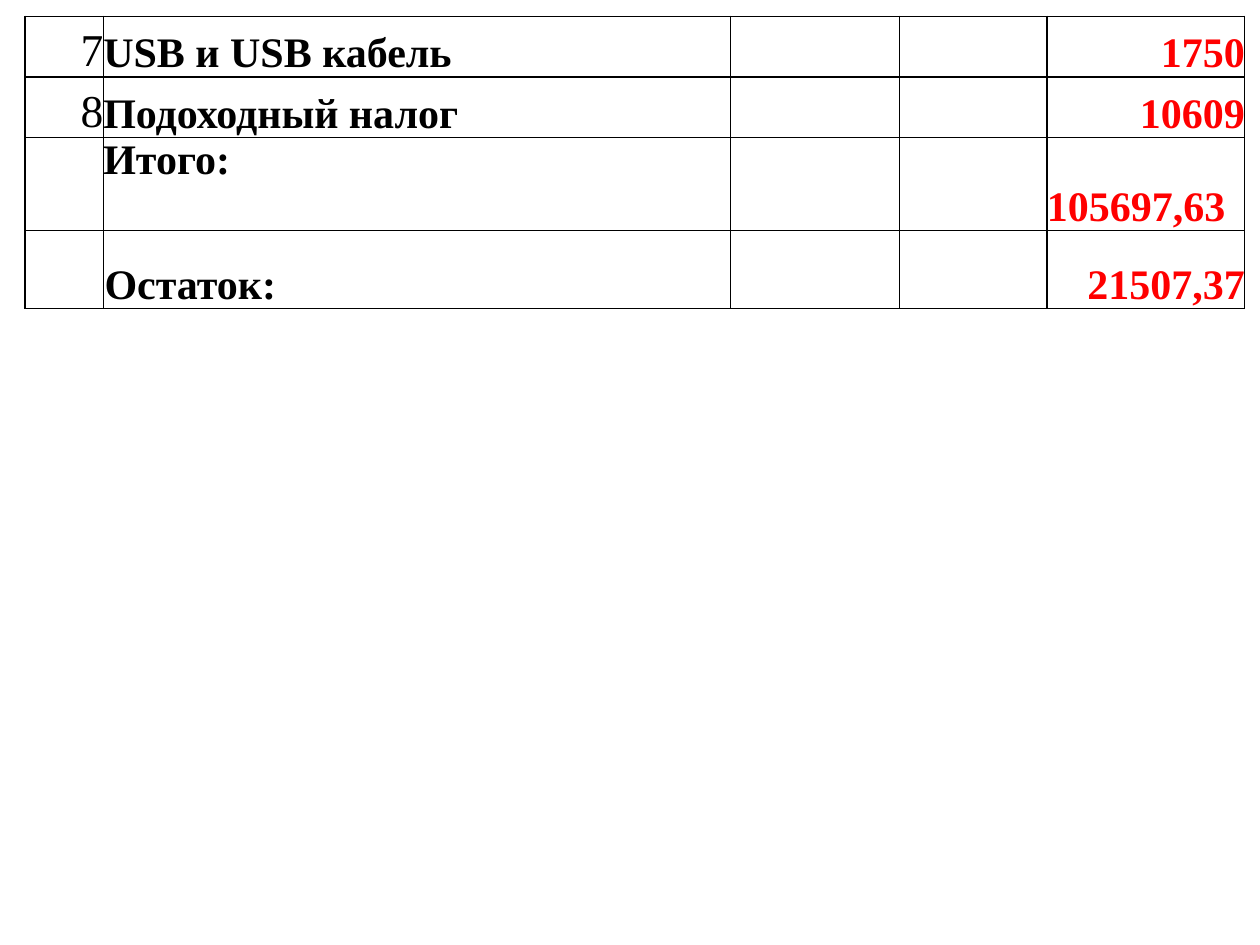
from dataclasses import dataclass
from lxml.etree import SubElement as Sub
from pptx import Presentation
from pptx.dml.color import RGBColor as RGB
from pptx.enum.text import MSO_ANCHOR as Anchor, PP_ALIGN as Align
from pptx.oxml.ns import qn
from pptx.util import Inches, Pt


@dataclass(frozen=True)
class Theme:
    font: str = "Times New Roman"
    ink: str = "000000"
    red: str = "FF0000"
    num: int = 26
    body: int = 24
    line: int = 1


theme = Theme()
rows = [
    ("7", "USB и USB кабель", "", "", "1750"),
    ("8", "Подоходный налог", "", "", "10609"),
    ("", "Итого: ", "", "", "105697,63"),
    ("", "Остаток:", "", "", "21507,37"),
]
widths = [0.62, 4.98, 1.34, 1.17, 1.57]
heights = [0.48, 0.48, 0.74, 0.62]
left, top = 0.2, 0.13
number, label, amount = 0, 1, 4
total, rest = 2, 3


def border(cell):
    props = cell._tc.get_or_add_tcPr()
    for side in ("lnL", "lnR", "lnT", "lnB"):
        line = Sub(props, qn("a:" + side), w=str(Pt(theme.line)))
        fill = Sub(line, qn("a:solidFill"))
        Sub(fill, qn("a:srgbClr"), val=theme.ink)


def write(cell, text, row, col):
    cell.margin_left = cell.margin_right = 0
    cell.margin_top = cell.margin_bottom = 0
    at_top = (row, col) == (total, label)
    cell.vertical_anchor = Anchor.TOP if at_top else Anchor.BOTTOM
    cell.text_frame.text = text
    para = cell.text_frame.paragraphs[0]
    flush = col == label or (row, col) == (total, amount)
    para.alignment = Align.LEFT if flush else Align.RIGHT
    if (row, col) == (rest, label):
        para._p.get_or_add_pPr().set("marL", str(Inches(0.01)))
    font = para.runs[0].font
    font.name = theme.font
    font.size = Pt(theme.num if col == number else theme.body)
    font.bold = col != number
    font.color.rgb = RGB.from_string(theme.red if col == amount else theme.ink)


deck = Presentation()
deck.slide_width, deck.slide_height = Inches(10), Inches(7.5)
slide = deck.slides.add_slide(deck.slide_layouts[6])
table = slide.shapes.add_table(
    len(rows), len(widths), Inches(left), Inches(top),
    Inches(sum(widths)), Inches(sum(heights))).table
table.first_row = table.horz_banding = False
for col, width in zip(table.columns, widths):
    col.width = Inches(width)
for row, height in zip(table.rows, heights):
    row.height = Inches(height)

for r, row in enumerate(rows):
    for c, text in enumerate(row):
        cell = table.cell(r, c)
        border(cell)
        cell.fill.background()
        if text:
            write(cell, text, r, c)

deck.save("out.pptx")
